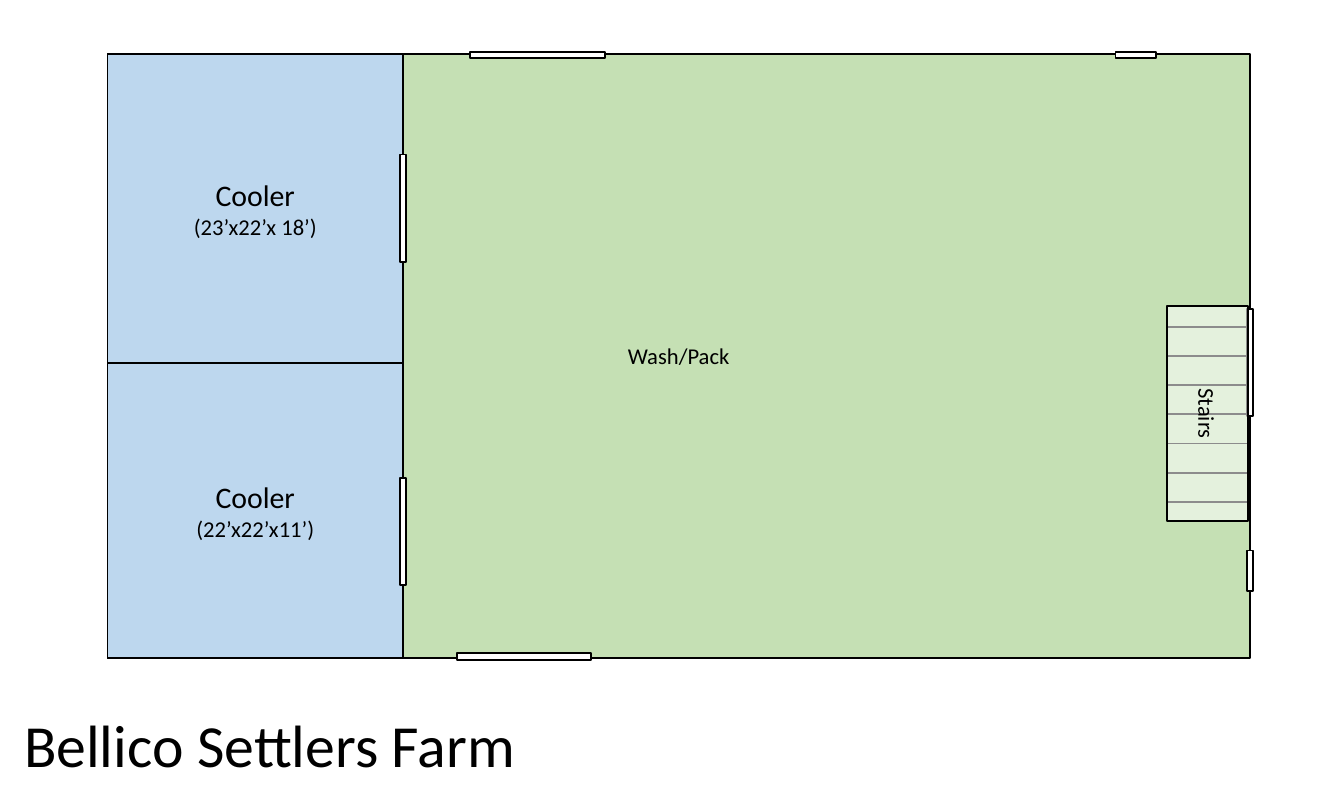
"""Draw the floor plan of a farm wash and pack house."""
from dataclasses import dataclass

from lxml import etree
from pptx import Presentation
from pptx.dml.color import RGBColor
from pptx.enum.shapes import MSO_SHAPE
from pptx.enum.text import MSO_ANCHOR, MSO_AUTO_SIZE, PP_ALIGN
from pptx.oxml.ns import qn
from pptx.util import Pt

RECTANGLE = MSO_SHAPE.RECTANGLE
MIDDLE = MSO_ANCHOR.MIDDLE
FIT_SHAPE = MSO_AUTO_SIZE.SHAPE_TO_FIT_TEXT
CENTER = PP_ALIGN.CENTER
LEFT = PP_ALIGN.LEFT

BLACK, WHITE, GREEN, BLUE = "000000", "FFFFFF", "C5E0B4", "BDD7EE"
TITLE_SIZE, ROOM_SIZE, NOTE_SIZE = 32, 16, 12.1
DOOR_THICKNESS = 3.4
STEP_COUNT, STEP_DEPTH, STAIR_WIDTH = 6, 15.65, 43.2


@dataclass(frozen=True)
class Label:
    text: str
    size: float


@dataclass(frozen=True)
class Block:
    left: float
    top: float
    width: float
    height: float
    fill: str | None = None
    labels: tuple[Label, ...] = ()
    rotation: float = 0
    opacity: int = 100


def color(value: str) -> RGBColor:
    return RGBColor.from_string(value)


def door(left: float, top: float, length: float, rotation: float = 0) -> Block:
    return Block(left, top, length, DOOR_THICKNESS, WHITE, rotation=rotation)


ROOMS = (
    Block(57.6, 28.8, 612, 324, GREEN, (Label("Wash/Pack", NOTE_SIZE),)),
    Block(57.6, 194.4, 158.4, 158.4, BLUE,
          (Label("Cooler", ROOM_SIZE), Label("(22’x22’x11’)", NOTE_SIZE))),
    Block(57.6, 28.8, 158.4, 165.6, BLUE,
          (Label("Cooler", ROOM_SIZE), Label("(23’x22’x 18’)", NOTE_SIZE))),
)
DOORS = (
    door(252, 27.8, 72),
    door(244.8, 350.2, 72),
    door(187.2, 283.3, 57.6, 90),
    door(187.2, 109.9, 57.6, 90),
    door(640.8, 192.6, 57.6, 90),
    door(597.6, 27.8, 21.6),
    door(658.8, 304.2, 21.6, 90),
)
STEPS = tuple(
    Block(639, 161.4 + index * STEP_DEPTH, STEP_DEPTH, STAIR_WIDTH, rotation=90)
    for index in range(STEP_COUNT)
)
STAIRWELL = Block(589.2, 200, 115.2, STAIR_WIDTH, WHITE,
                  (Label("Stairs", NOTE_SIZE),), 90, 55)


def write_labels(text_frame, labels: tuple[Label, ...], alignment: PP_ALIGN) -> None:
    for index, label in enumerate(labels):
        paragraph = text_frame.add_paragraph() if index else text_frame.paragraphs[0]
        paragraph.alignment = alignment
        run = paragraph.add_run()
        run.text = label.text
        for name, value in {"name": "Calibri", "size": Pt(label.size)}.items():
            setattr(run.font, name, value)
        run.font.color.rgb = color(BLACK)


def draw_block(shapes, block: Block) -> None:
    shape = shapes.add_shape(RECTANGLE, Pt(block.left), Pt(block.top),
                             Pt(block.width), Pt(block.height))
    shape.rotation = block.rotation
    shape.shadow.inherit = False
    shape.line.color.rgb = color(BLACK)
    shape.line.width = Pt(1)
    if block.fill is None:
        shape.fill.background()
    else:
        shape.fill.solid()
        shape.fill.fore_color.rgb = color(block.fill)
    if block.opacity < 100:
        fill_color = shape.element.spPr.find(qn("a:solidFill"))[0]
        etree.SubElement(fill_color, qn("a:alpha"), val=str(block.opacity * 1000))
    shape.text_frame.vertical_anchor = MIDDLE
    write_labels(shape.text_frame, block.labels, CENTER)


def draw_title(shapes, text: str) -> None:
    text_frame = shapes.add_textbox(Pt(5.8), Pt(375.8), Pt(287.3), Pt(46.1)).text_frame
    for name, value in {"word_wrap": False, "auto_size": FIT_SHAPE}.items():
        setattr(text_frame, name, value)
    write_labels(text_frame, (Label(text, TITLE_SIZE),), LEFT)


def main() -> None:
    presentation = Presentation()
    presentation.slide_width, presentation.slide_height = Pt(720), Pt(432)
    slide = presentation.slides.add_slide(presentation.slide_layouts[6])
    draw_title(slide.shapes, "Bellico Settlers Farm")
    for block in ROOMS + DOORS:
        draw_block(slide.shapes, block)
    staircase = slide.shapes.add_group_shape()
    for block in STEPS + (STAIRWELL,):
        draw_block(staircase.shapes, block)
    presentation.save("out.pptx")


if __name__ == "__main__":
    main()
